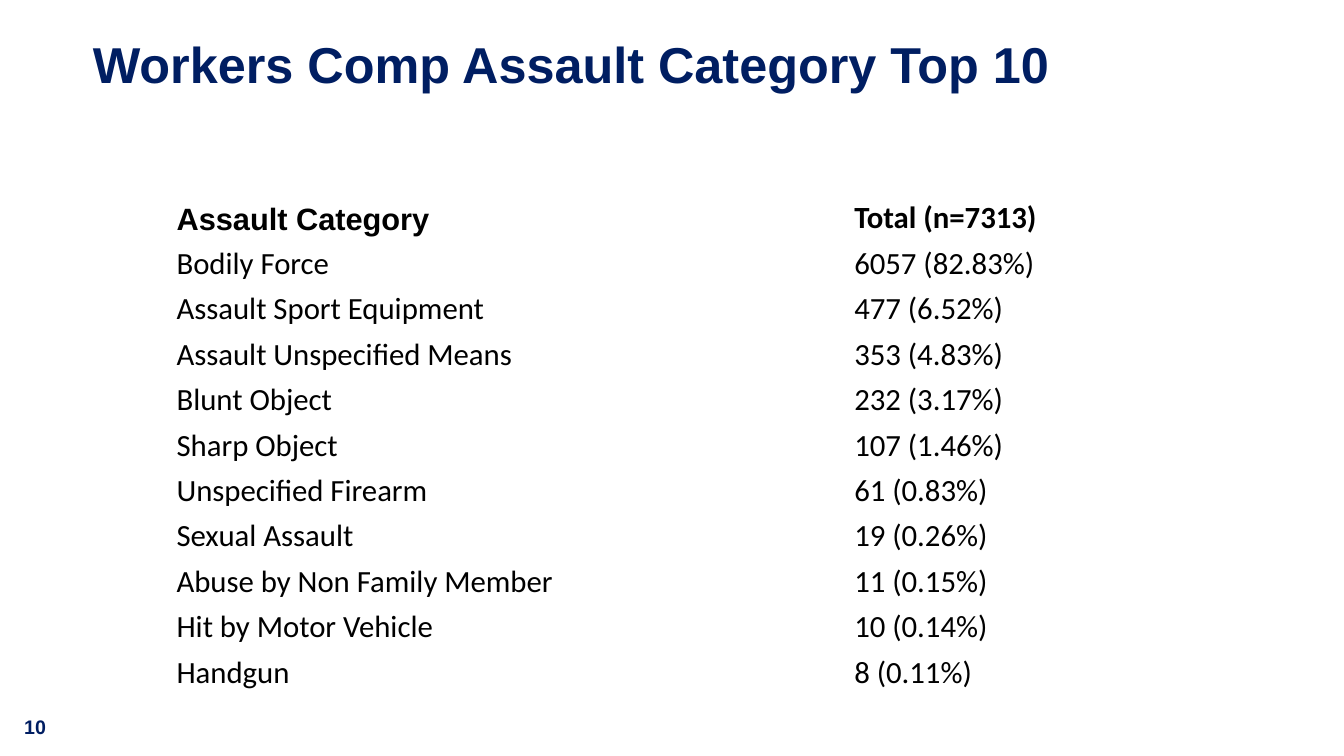
"""Build the slide listing the top ten workers comp assault categories."""
from pptx import Presentation
from pptx import util as u
from pptx.dml.color import RGBColor
from pptx.enum import text

NAVY = RGBColor(0x00, 0x1E, 0x62)
BLACK = RGBColor(0x00, 0x00, 0x00)

ROWS = [
    ("Assault Category", "Total (n=7313)"),
    ("Bodily Force", "6057 (82.83%)"),
    ("Assault Sport Equipment", "477 (6.52%)"),
    ("Assault Unspecified Means", "353 (4.83%)"),
    ("Blunt Object", "232 (3.17%)"),
    ("Sharp Object", "107 (1.46%)"),
    ("Unspecified Firearm", "61 (0.83%)"),
    ("Sexual Assault", "19 (0.26%)"),
    ("Abuse by Non Family Member", "11 (0.15%)"),
    ("Hit by Motor Vehicle", "10 (0.14%)"),
    ("Handgun", "8 (0.11%)"),
]


class Deck:
    heading_font = "Arial"
    body_font = "Calibri"

    def __init__(self, prs):
        self.s = prs.slides.add_slide(prs.slide_layouts[6])

    def style(self, p, size, color, bold, name):
        p.font.size = u.Pt(size)
        p.font.color.rgb = color
        p.font.bold = bold
        p.font.name = name

    def label(self, words, box, size, inset=(0, 0), spacing=1.0):
        sp = self.s.shapes.add_textbox(*(u.Cm(v) for v in box))
        tf = sp.text_frame
        tf.word_wrap = True
        tf.margin_left = tf.margin_right = u.Cm(inset[0])
        tf.margin_top = tf.margin_bottom = u.Cm(inset[1])
        p = tf.paragraphs[0]
        p.text = words
        p.line_spacing = spacing
        self.style(p, size, NAVY, True, self.heading_font)

    def table(self, rows, left, top, widths, row_height, size):
        frame = self.s.shapes.add_table(
            len(rows), len(widths), u.Cm(left), u.Cm(top),
            u.Cm(sum(widths)), u.Cm(row_height * len(rows)))
        tbl = frame.table
        tbl.first_row = tbl.horz_banding = False
        for column, width in zip(tbl.columns, widths):
            column.width = u.Cm(width)
        for i, row in enumerate(rows):
            tbl.rows[i].height = u.Cm(row_height)
            for j, words in enumerate(row):
                name = self.heading_font if i == j == 0 else self.body_font
                self.cell(tbl.cell(i, j), words, size, i == 0, name)

    def cell(self, cell, words, size, bold, name):
        cell.fill.background()
        cell.vertical_anchor = text.MSO_ANCHOR.BOTTOM
        cell.margin_left = cell.margin_right = cell.margin_top = u.Cm(0.05)
        cell.margin_bottom = 0
        p = cell.text_frame.paragraphs[0]
        p.text = words
        self.style(p, size, BLACK, bold, name)


def main():
    prs = Presentation()
    prs.slide_width, prs.slide_height = u.Cm(33.87), u.Cm(19.05)
    deck = Deck(prs)
    deck.label("10", (0.36, 17.88, 1.68, 0.86), 14, inset=(0.25, 0.13))
    deck.table(ROWS, 4.4, 4.83, (17.08, 8.82), 1.145, 22)
    deck.label("Workers Comp Assault Category Top 10",
               (2.34, 1.02, 29.21, 3.68), 36, spacing=0.9)
    prs.save("out.pptx")


if __name__ == "__main__":
    main()
